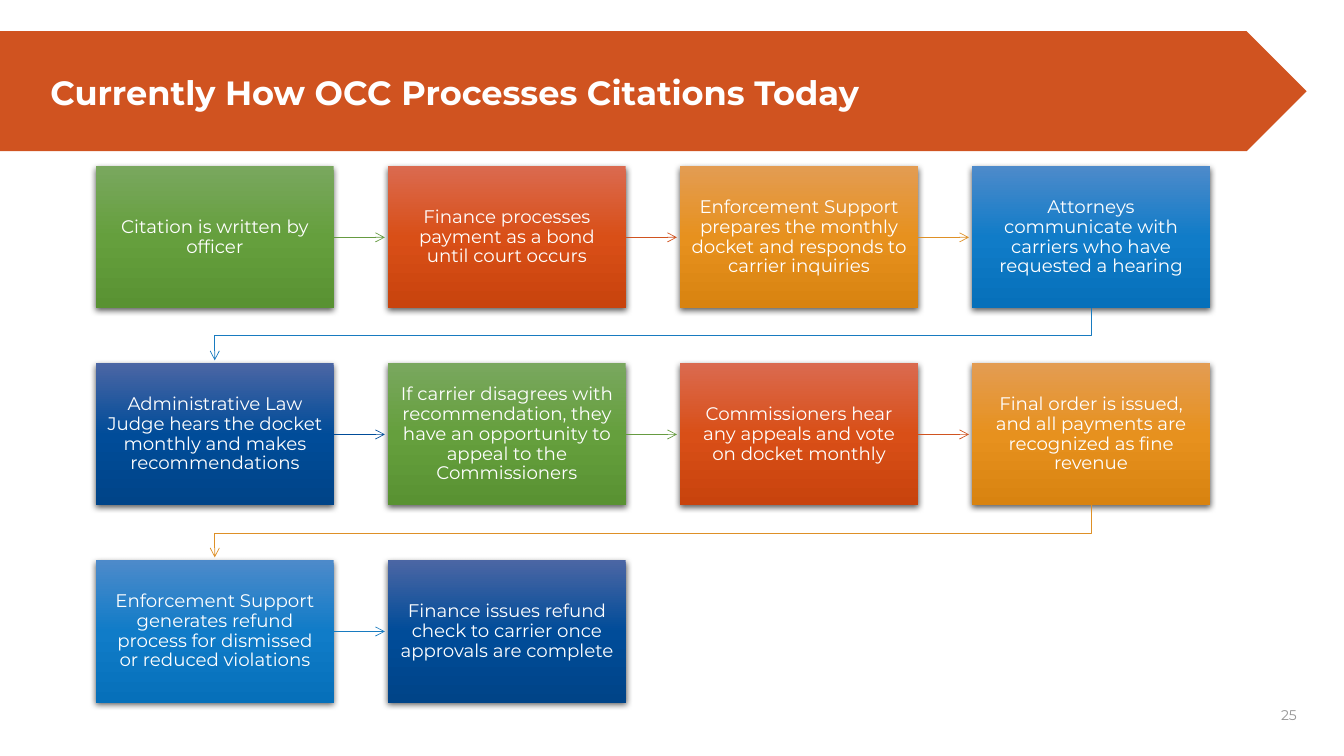
import copy
from dataclasses import dataclass

import lxml.etree
import pptx
import pptx.dml.color
import pptx.dml.line
import pptx.enum.shapes
import pptx.enum.text
import pptx.oxml.ns
import pptx.shapes.autoshape
import pptx.shapes.base
import pptx.slide
import pptx.text.text
import pptx.util

FONT = "Montserrat"
WIDE = pptx.util.Inches(13.33)
HIGH = pptx.util.Inches(7.5)
ALIGN = pptx.enum.text.PP_ALIGN
MIDDLE = pptx.enum.text.MSO_ANCHOR.MIDDLE
SHAPE = pptx.enum.shapes.MSO_SHAPE
COLORS = {"white": "FFFFFF", "gray": "949494", "black": "000000", "banner": "D05320"}
FILLS = {
    "green": ("79A75E", "659F3D", "599232"),
    "red": ("DA6A4F", "D94F17", "C8430D"),
    "amber": ("E39C52", "E7911E", "D88310"),
    "sky": ("4D8ACA", "107CC8", "0670BA"),
    "navy": ("4B66A4", "004C99", "004488"),
}
LINES = {"green": "669B41", "red": "D05320", "amber": "DE9027", "sky": "187BC0", "navy": "004C99"}
STEPS = (
    "Citation is written by officer",
    "Finance processes payment as a bond until court occurs",
    "Enforcement Support prepares the monthly docket and responds to carrier inquiries",
    "Attorneys communicate with carriers who have requested a hearing",
    "Administrative Law Judge hears the docket monthly and makes recommendations",
    "If carrier disagrees with recommendation, they have an opportunity to appeal to the Commissioners",
    "Commissioners hear any appeals and vote on docket monthly",
    "Final order is issued, and all payments are recognized as fine revenue",
    "Enforcement Support generates refund process for dismissed or reduced violations",
    "Finance issues refund check to carrier once approvals are complete",
)


@dataclass(frozen=True)
class Area:
    """Edges and sizes in percent of the slide."""
    left: float
    top: float
    width: float
    height: float

    def emu(self) -> tuple[int, int, int, int]:
        return (int(WIDE * self.left / 100), int(HIGH * self.top / 100),
                int(WIDE * self.width / 100), int(HIGH * self.height / 100))


@dataclass(frozen=True)
class Grid:
    area: Area
    cols: int
    rows: int
    width: float
    height: float

    def cell(self, index: int) -> Area:
        row, col = divmod(index, self.cols)
        across = (self.area.width - self.width) / (self.cols - 1)
        down = (self.area.height - self.height) / (self.rows - 1)
        return Area(self.area.left + col * across, self.area.top + row * down, self.width, self.height)


@dataclass(frozen=True)
class Step:
    text: str
    tint: str
    area: Area


BANNER = Area(0, 4.13, 97.22, 15.87)
TITLE = Area(3.75, 6, 93.47, 12.27)
PAGE = Area(74.72, 93.07, 22.51, 2.93)
GRID = Grid(Area(7.13, 22, 82.89, 70.93), 4, 3, 17.7, 18.8)
SPACE = pptx.util.Inches(0.03)


def color(code: str) -> pptx.dml.color.RGBColor:
    return pptx.dml.color.RGBColor.from_string(code)


def write(frame: pptx.text.text.TextFrame, text: str, size: float, tint: str,
          align: ALIGN, bold: bool = False) -> None:
    frame.text = text
    frame.word_wrap = True
    frame.auto_size = pptx.enum.text.MSO_AUTO_SIZE.NONE
    frame.vertical_anchor = MIDDLE
    line = frame.paragraphs[0]
    line.alignment = align
    font = line.runs[0].font
    font.name, font.size, font.bold = FONT, pptx.util.Pt(size), bold
    font.color.rgb = color(COLORS[tint])


def place(shape: pptx.shapes.base.BaseShape, area: Area) -> None:
    shape.left, shape.top, shape.width, shape.height = area.emu()


def shade(shape: pptx.shapes.autoshape.Shape, codes: tuple[str, ...]) -> None:
    shape.fill.gradient()
    shape.fill.gradient_angle = 270
    stops = shape.element.find(".//" + pptx.oxml.ns.qn("a:gsLst"))
    stops.append(copy.deepcopy(stops[0]))
    for index, (stop, code) in enumerate(zip(shape.fill.gradient_stops, codes)):
        stop.position = index / (len(codes) - 1)
        stop.color.rgb = color(code)


def lift(shape: pptx.shapes.autoshape.Shape) -> None:
    tag = pptx.oxml.ns.qn
    shape.shadow.inherit = False
    drop = lxml.etree.SubElement(
        shape.element.spPr.find(tag("a:effectLst")), tag("a:outerShdw"),
        blurRad=str(pptx.util.Pt(4.5)), dist=str(pptx.util.Pt(1.5)),
        dir="5400000", algn="ctr", rotWithShape="0")
    tint = lxml.etree.SubElement(drop, tag("a:srgbClr"), val=COLORS["black"])
    lxml.etree.SubElement(tint, tag("a:alpha"), val="63000")


def draw_step(slide: pptx.slide.Slide, step: Step) -> pptx.shapes.autoshape.Shape:
    box = slide.shapes.add_shape(SHAPE.RECTANGLE, *step.area.emu())
    shade(box, FILLS[step.tint])
    lift(box)
    box.line.fill.background()
    frame = box.text_frame
    write(frame, step.text, 13, "white", ALIGN.CENTER)
    frame.margin_left = frame.margin_right = pptx.util.Inches(0.1)
    frame.margin_top = frame.margin_bottom = pptx.util.Inches(0.1)
    frame.paragraphs[0].line_spacing = 0.9
    return box


def point(line: pptx.dml.line.LineFormat, element: lxml.etree.ElementBase, tint: str) -> None:
    line.color.rgb = color(LINES[tint])
    line.width = pptx.util.Pt(0.5)
    stroke = element.find(".//" + pptx.oxml.ns.qn("a:ln"))
    lxml.etree.SubElement(stroke, pptx.oxml.ns.qn("a:tailEnd"), type="arrow")


def join(slide: pptx.slide.Slide, box: pptx.shapes.autoshape.Shape,
         goal: pptx.shapes.autoshape.Shape, tint: str) -> None:
    if box.top == goal.top:
        level = box.top + box.height // 2
        arrow = slide.shapes.add_connector(
            pptx.enum.shapes.MSO_CONNECTOR.STRAIGHT,
            box.left + box.width, level, goal.left - SPACE, level)
        arrow.begin_connect(box, 3)
        point(arrow.line, arrow.element, tint)
        lxml.etree.SubElement(arrow.element.spPr, pptx.oxml.ns.qn("a:effectLst"))
        return
    start, end = (item.left + item.width // 2 for item in (box, goal))
    base = box.top + box.height
    bend = (base + goal.top) // 2
    route = slide.shapes.build_freeform(start, base)
    route.add_line_segments([(start, bend), (end, bend), (end, goal.top - SPACE)], close=False)
    arrow = route.convert_to_shape()
    arrow.fill.background()
    arrow.shadow.inherit = False
    point(arrow.line, arrow.element, tint)


def draw_head(slide: pptx.slide.Slide) -> None:
    title = slide.shapes.title
    place(title, TITLE)
    write(title.text_frame, "Currently How OCC Processes Citations Today", 24, "white", ALIGN.LEFT, True)
    title.text_frame.margin_left = 0
    banner = slide.shapes.add_shape(SHAPE.PENTAGON, *BANNER.emu())
    banner.shadow.inherit = False
    banner.fill.solid()
    banner.fill.fore_color.rgb = color(COLORS["banner"])
    banner.line.fill.background()
    title.element.addprevious(banner.element)


def main() -> None:
    deck = pptx.Presentation()
    deck.slide_width, deck.slide_height = WIDE, HIGH
    slide = deck.slides.add_slide(deck.slide_layouts[5])
    draw_head(slide)
    page = slide.shapes.add_textbox(*PAGE.emu())
    write(page.text_frame, "25", 10, "gray", ALIGN.RIGHT)
    tints = tuple(FILLS)
    steps = [Step(text, tints[index % len(tints)], GRID.cell(index)) for index, text in enumerate(STEPS)]
    boxes = [draw_step(slide, step) for step in steps]
    for step, box, goal in zip(steps, boxes, boxes[1:]):
        join(slide, box, goal, step.tint)
    deck.save("out.pptx")


if __name__ == "__main__":
    main()
